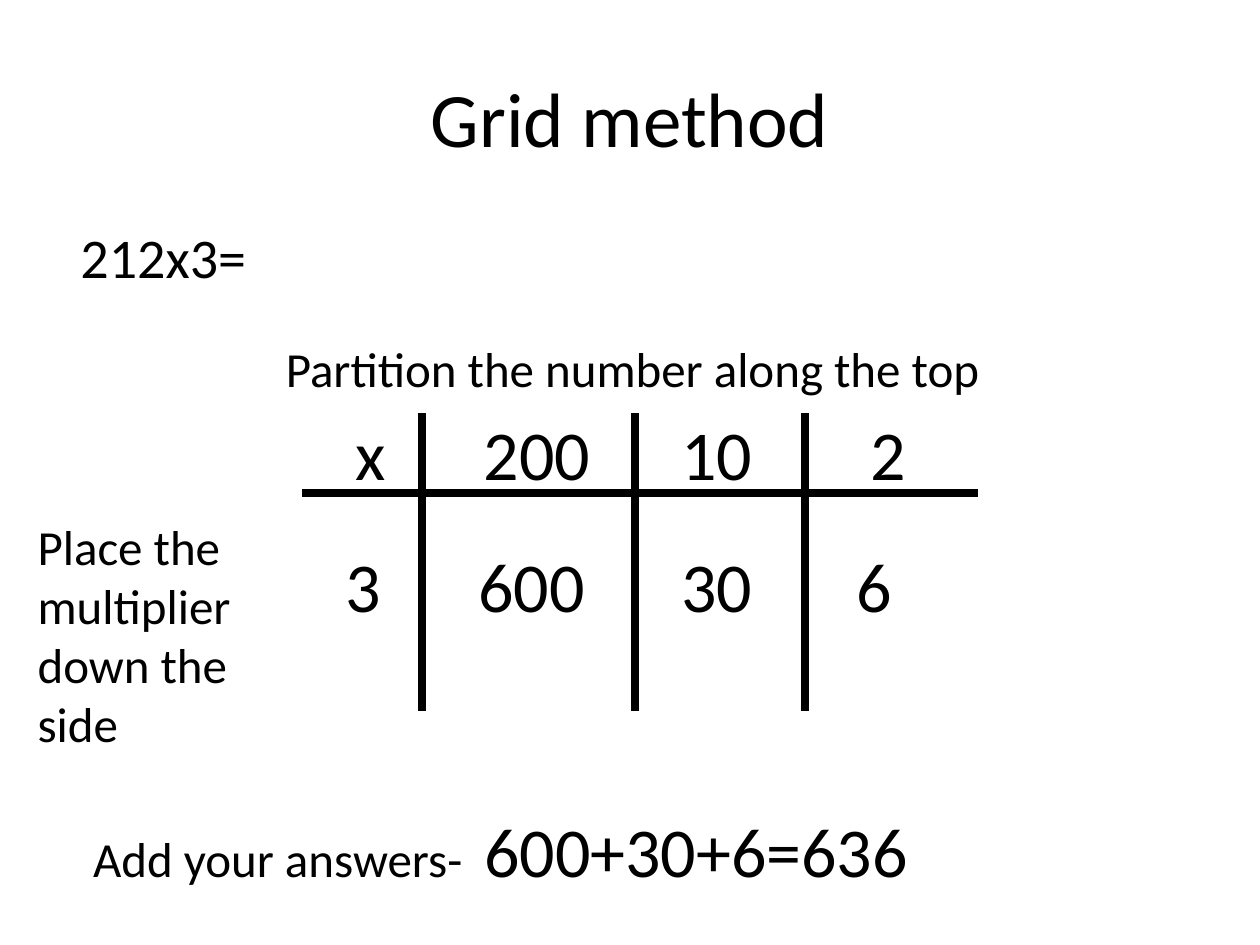
from dataclasses import dataclass

from lxml.etree import SubElement
from pptx import Presentation
from pptx.dml.color import RGBColor
from pptx.enum.shapes import MSO_CONNECTOR as Connector
from pptx.enum.text import MSO_ANCHOR as Anchor, MSO_AUTO_SIZE as AutoSize, PP_ALIGN as Align
from pptx.oxml.ns import qn
from pptx.slide import Slide
from pptx.util import Inches, Pt

COLORS = {"background": "FFFFFF", "ink": "000000"}
FONT = "Calibri"
GRID_COLUMNS = 100
SLIDE_WIDTH, SLIDE_HEIGHT = Inches(10), Inches(7.5)
UNIT = SLIDE_WIDTH / GRID_COLUMNS

COLUMN_EDGES = (24, 33.5, 50.4, 63.9, 77.6)
TABLE_TOP, HEADER_RULE, TABLE_BOTTOM = 32.8, 39.1, 56.4
HEADER_ROW, PRODUCT_ROW = 32.1, 42.6
CELL_HEIGHT = 7.7


@dataclass(frozen=True)
class Run:
    text: str
    size: float
    spacing: float = 0


@dataclass(frozen=True)
class Label:
    left: float
    top: float
    width: float
    height: float
    runs: tuple[Run, ...]
    align: Align = Align.LEFT
    anchor: Anchor = Anchor.TOP
    auto_size: AutoSize = AutoSize.SHAPE_TO_FIT_TEXT


@dataclass(frozen=True)
class Cell:
    column: int
    row: float
    indent: float
    width: float
    text: str


@dataclass(frozen=True)
class Rule:
    start: tuple[float, float]
    end: tuple[float, float]


LABELS = (
    Label(5, 3, 90, 12.5, (Run("Grid method", 44),), Align.CENTER, Anchor.MIDDLE, AutoSize.NONE),
    Label(5.4, 17.2, 90, 49.5, (Run("212x3=", 32),), auto_size=AutoSize.NONE),
    Label(21.7, 26.4, 57.5, 5.7, (Run("Partition the number along the top", 28),)),
    Label(2, 40.5, 18.1, 19.9, (Run("Place the multiplier down the side", 28),)),
    Label(6.4, 63.6, 71.1, CELL_HEIGHT,
          (Run("Add your answers-", 28), Run(" ", 28, 6.3), Run("600+30+6=636", 40))),
)

CELLS = (
    Cell(0, HEADER_ROW, 3.2, 6.3, "x"),
    Cell(1, HEADER_ROW, 3.9, 13, "200"),
    Cell(2, HEADER_ROW, 2.7, 8.6, "10"),
    Cell(3, HEADER_ROW, 4.2, 6.3, "2"),
    Cell(0, PRODUCT_ROW, 2.4, 6.3, "3"),
    Cell(1, PRODUCT_ROW, 3.5, 10.6, "600"),
    Cell(2, PRODUCT_ROW, 2.7, 8.6, "30"),
    Cell(3, PRODUCT_ROW, 3.1, 8.6, "6"),
)

RULES = (
    Rule((COLUMN_EDGES[0], HEADER_RULE), (COLUMN_EDGES[-1], HEADER_RULE)),
    *(Rule((edge, TABLE_TOP), (edge, TABLE_BOTTOM)) for edge in COLUMN_EDGES[1:-1]),
)


def grid(*lengths: float) -> list[int]:
    return [round(length * UNIT) for length in lengths]


def color(name: str) -> RGBColor:
    return RGBColor.from_string(COLORS[name])


def draw_label(slide: Slide, label: Label) -> None:
    shape = slide.shapes.add_textbox(*grid(label.left, label.top, label.width, label.height))
    frame = shape.text_frame
    frame.word_wrap = True
    frame.auto_size = label.auto_size
    frame.vertical_anchor = label.anchor
    paragraph = frame.paragraphs[0]
    paragraph.alignment = label.align
    for item in label.runs:
        run = paragraph.add_run()
        run.text = item.text
        run.font.name = FONT
        run.font.size = Pt(item.size)
        run.font.color.rgb = color("ink")
        if item.spacing:
            run.font._element.set("spc", str(round(item.spacing * 100)))


def draw_cell(slide: Slide, cell: Cell) -> None:
    left = COLUMN_EDGES[cell.column] + cell.indent
    draw_label(slide, Label(left, cell.row, cell.width, CELL_HEIGHT, (Run(cell.text, 40),)))


def draw_rule(slide: Slide, rule: Rule) -> None:
    connector = slide.shapes.add_connector(Connector.STRAIGHT, *grid(*rule.start, *rule.end))
    connector.line.color.rgb = color("ink")
    connector.line.width = Pt(4.5)
    SubElement(connector._element.spPr, qn("a:effectLst"))


def main() -> None:
    presentation = Presentation()
    presentation.slide_width, presentation.slide_height = SLIDE_WIDTH, SLIDE_HEIGHT
    slide = presentation.slides.add_slide(presentation.slide_layouts[6])
    slide.background.fill.solid()
    slide.background.fill.fore_color.rgb = color("background")
    for rule in RULES:
        draw_rule(slide, rule)
    for label in LABELS:
        draw_label(slide, label)
    for cell in CELLS:
        draw_cell(slide, cell)
    presentation.save("out.pptx")


if __name__ == "__main__":
    main()
